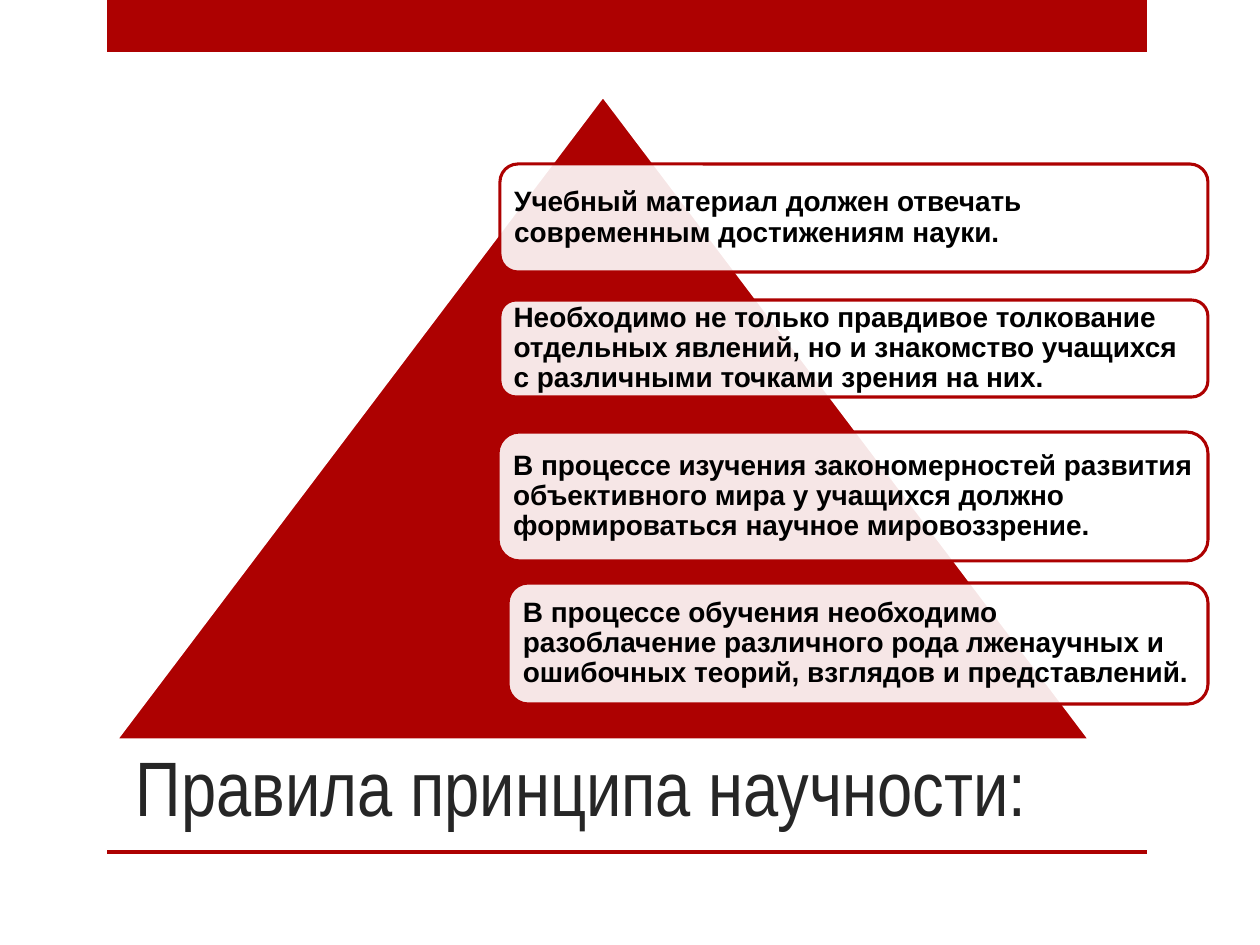
from lxml.etree import SubElement
from pptx import Presentation
from pptx.dml.color import RGBColor
from pptx.enum.shapes import MSO_SHAPE as Shape
from pptx.enum.text import MSO_ANCHOR as Anchor, MSO_AUTO_SIZE as AutoSize, PP_ALIGN as Align
from pptx.oxml.ns import qn
from pptx.util import Emu, Pt

# Content
TITLE = "Правила принципа научности:"
TITLE_PLACE = (123, 750, 1068, 88)
RULES = [  # left, top, height, wording
    (500, 164, 108, "Учебный материал должен отвечать современным достижениям науки."),
    (500, 300, 97, "Необходимо не только правдивое толкование отдельных явлений, "
                   "но и знакомство учащихся с различными точками зрения на них."),
    (498, 432, 129, "В процессе изучения закономерностей развития объективного мира "
                    "у учащихся должно формироваться научное мировоззрение."),
    (508, 583, 121, "В процессе обучения необходимо разоблачение различного рода "
                    "лженаучных и ошибочных теорий, взглядов и представлений."),
]
RULES_RIGHT = 1208
BANDS = [(107, 0, 1040, 52), (107, 850, 1040, 4)]
PYRAMID = (116, 96, 974, 644)
COLORS = {"red": "AD0101", "white": "FFFFFF", "title": "262626", "text": "000000"}
TITLE_FONT = {"name": "Arial Narrow", "size": Pt(44.1), "bold": False}
RULE_FONT = {"name": "Arial", "size": Pt(16), "bold": True}
RULE_OPACITY = 90


def px(length):
    return Emu(round(length * 914400 / 126))


def color(name):
    return RGBColor.from_string(COLORS[name])


def apply(target, values):
    for name, value in values.items():
        setattr(target, name, value)


def add_box(page, kind, place, fill, line=None):
    box = page.shapes.add_shape(kind, *map(px, place))
    box.shadow.inherit = False
    box.fill.solid()
    box.fill.fore_color.rgb = color(fill)
    if line:
        box.line.color.rgb = color(line)
        box.line.width = Pt(1.75)
    else:
        box.line.fill.background()
    return box


def write(frame, words, font, ink, **layout):
    apply(frame, {"word_wrap": True, "auto_size": AutoSize.NONE, **layout})
    para = frame.paragraphs[0]
    para.alignment = Align.LEFT
    para.line_spacing = 0.9 if ink == "text" else 1.0
    span = para.add_run()
    span.text = words
    apply(span.font, font)
    span.font.color.rgb = color(ink)


def main():
    deck = Presentation()
    deck.slide_width, deck.slide_height = px(1260), px(945)
    page = deck.slides.add_slide(deck.slide_layouts[5])

    # Bands at the top and under the title
    for place in BANDS:
        add_box(page, Shape.RECTANGLE, place, "red")

    # Title
    title = page.shapes.title
    apply(title, dict(zip(("left", "top", "width", "height"), map(px, TITLE_PLACE))))
    write(title.text_frame, TITLE, TITLE_FONT, "title", vertical_anchor=Anchor.BOTTOM)

    # Pyramid with the rules over it
    add_box(page, Shape.ISOSCELES_TRIANGLE, PYRAMID, "red", "white")
    for left, top, height, words in RULES:
        place = (left, top, RULES_RIGHT - left, height)
        box = add_box(page, Shape.ROUNDED_RECTANGLE, place, "white", "red")
        tint = box.fill._xPr.find(qn("a:solidFill"))[0]
        SubElement(tint, qn("a:alpha"), val=str(RULE_OPACITY * 1000))
        write(box.text_frame, words, RULE_FONT, "text", vertical_anchor=Anchor.MIDDLE,
              margin_left=px(9), margin_right=px(6), margin_top=px(9), margin_bottom=px(9))

    deck.save("out.pptx")


if __name__ == "__main__":
    main()
